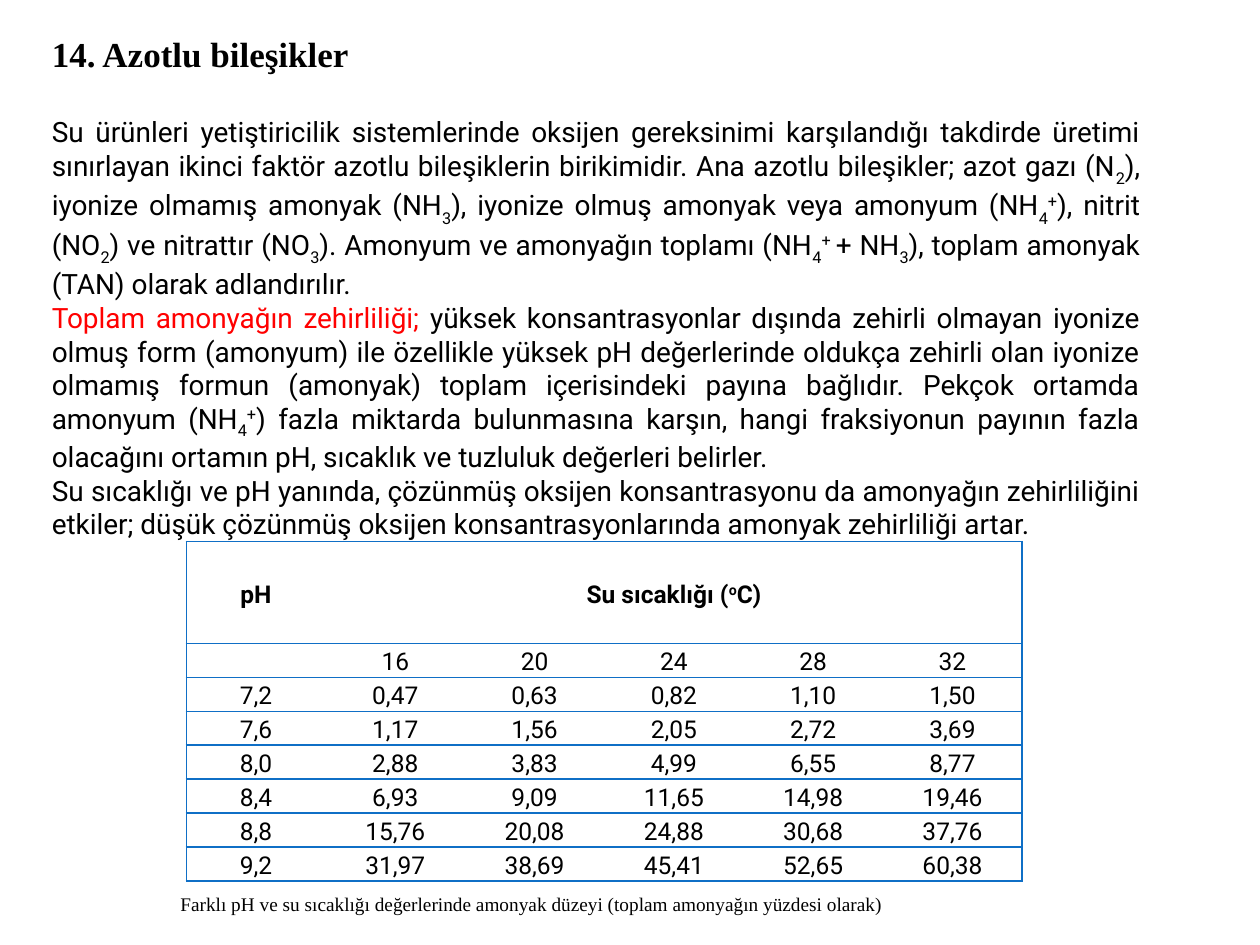
"""Build the slide on nitrogen compounds with its ammonia table."""
from lxml.etree import SubElement
from pptx import Presentation
from pptx.dml.color import RGBColor
from pptx.enum.text import MSO_ANCHOR, PP_ALIGN
from pptx.oxml.ns import qn
from pptx.util import Pt

BLACK = RGBColor(0x00, 0x00, 0x00)
RED = RGBColor(0xFF, 0x00, 0x00)
WHITE = RGBColor(0xFF, 0xFF, 0xFF)
BLUE = RGBColor(0x0F, 0x6F, 0xC6)

TITLE = {"name": "Times New Roman", "size": Pt(20), "bold": True}
BODY = {"name": "Roboto", "size": Pt(16), "bold": False}
CAPTION = {"name": "Times New Roman", "size": Pt(11), "bold": False}
FIGURE = {"name": "Roboto", "size": Pt(14), "bold": False}
HEADING = {**FIGURE, "bold": True}


def write(paragraph, marked, style, color=BLACK, lowered="-30000"):
    """Add runs; pieces between bars are subscript after _ and superscript after ^."""
    baselines = {"_": lowered, "^": "30000"}
    for piece in marked.split("|"):
        run = paragraph.add_run()
        run.text = piece.lstrip("_^")
        for key, value in style.items():
            setattr(run.font, key, value)
        run.font.color.rgb = color
        if piece[:1] in baselines:
            run._r.get_or_add_rPr().set("baseline", baselines[piece[0]])


def draw_border(cell, position, side, color):
    """Draw one cell edge, or hide it when the colour is None."""
    edge = SubElement(cell._tc.get_or_add_tcPr(), qn(f"a:ln{side}"), w=str(Pt(1)))
    cell._tc.tcPr.insert(position, edge)
    if color is None:
        SubElement(edge, qn("a:noFill"))
    else:
        fill = SubElement(edge, qn("a:solidFill"))
        SubElement(fill, qn("a:srgbClr"), val=str(color))


deck = Presentation()
deck.slide_width, deck.slide_height = Pt(720), Pt(540)
slide = deck.slides.add_slide(deck.slide_layouts[6])

article = slide.shapes.add_textbox(Pt(22.5), Pt(16.5), Pt(636), Pt(307)).text_frame
article.word_wrap = True
article.margin_top = Pt(2)
title = article.paragraphs[0]
title.space_after = Pt(23)
write(title, "14. Azotlu bileşikler", TITLE)

compounds, toxicity, oxygen = [article.add_paragraph() for _ in range(3)]
for paragraph in (compounds, toxicity, oxygen):
    paragraph.alignment = PP_ALIGN.JUSTIFY
write(
    compounds,
    "Su ürünleri yetiştiricilik sistemlerinde oksijen gereksinimi karşılandığı takdirde "
    "üretimi sınırlayan ikinci faktör azotlu bileşiklerin birikimidir. Ana azotlu "
    "bileşikler; azot gazı (N|_2|), iyonize olmamış amonyak (NH|_3|), iyonize olmuş "
    "amonyak veya amonyum (NH|_4|^+|), nitrit (NO|_2|) ve nitrattır (NO|_3|). Amonyum ve "
    "amonyağın toplamı (NH|_4|^+ |+ NH|_3|), toplam amonyak (TAN) olarak adlandırılır.",
    BODY,
)
write(toxicity, "Toplam amonyağın zehirliliği; ", BODY, RED)
write(
    toxicity,
    "yüksek konsantrasyonlar dışında zehirli olmayan iyonize olmuş form (amonyum) ile "
    "özellikle yüksek pH değerlerinde oldukça zehirli olan iyonize olmamış formun "
    "(amonyak) toplam içerisindeki payına bağlıdır. Pekçok ortamda amonyum (NH|_4|^+|) "
    "fazla miktarda bulunmasına karşın, hangi fraksiyonun payının fazla olacağını "
    "ortamın pH, sıcaklık ve tuzluluk değerleri belirler.",
    BODY,
    lowered="-25000",
)
write(
    oxygen,
    "Su sıcaklığı ve pH yanında, çözünmüş oksijen konsantrasyonu da amonyağın "
    "zehirliliğini etkiler; düşük çözünmüş oksijen konsantrasyonlarında amonyak "
    "zehirliliği artar.",
    BODY,
)

ammonia_levels = [
    ["pH", "Su sıcaklığı (|^o|C)", "", "", "", ""],
    ["", "16", "20", "24", "28", "32"],
    ["7,2", "0,47", "0,63", "0,82", "1,10", "1,50"],
    ["7,6", "1,17", "1,56", "2,05", "2,72", "3,69"],
    ["8,0", "2,88", "3,83", "4,99", "6,55", "8,77"],
    ["8,4", "6,93", "9,09", "11,65", "14,98", "19,46"],
    ["8,8", "15,76", "20,08", "24,88", "30,68", "37,76"],
    ["9,2", "31,97", "38,69", "45,41", "52,65", "60,38"],
]
last_column = len(ammonia_levels[0]) - 1
table = slide.shapes.add_table(
    len(ammonia_levels), last_column + 1, Pt(106.5), Pt(309.5), Pt(477.6), Pt(194)
).table
table.first_row = table.horz_banding = False
for column in table.columns:
    column.width = Pt(79.6)
for r, levels in enumerate(ammonia_levels):
    table.rows[r].height = Pt(19.4 if r else 58.2)
    for c, level in enumerate(levels):
        cell = table.cell(r, c)
        cell.margin_left = cell.margin_right = Pt(5)
        cell.margin_top = cell.margin_bottom = 0
        cell.vertical_anchor = MSO_ANCHOR.MIDDLE if r < 2 else MSO_ANCHOR.TOP
        cell.fill.solid()
        cell.fill.fore_color.rgb = WHITE
        edges = {
            "L": BLUE if c == 0 else None,
            "R": BLUE if c == last_column or (r == 0 and c > 0) else None,
            "T": BLUE,
            "B": BLUE,
        }
        for position, (side, color) in enumerate(edges.items()):
            draw_border(cell, position, side, color)
        entry = cell.text_frame.paragraphs[0]
        entry.alignment = PP_ALIGN.CENTER
        entry.line_spacing = 1.15
        if level:
            write(entry, level, FIGURE if r else HEADING)
        else:
            entry._p.get_or_add_endParaRPr().set("sz", "1400")
table.cell(0, 1).merge(table.cell(0, last_column))

caption = slide.shapes.add_textbox(Pt(96), Pt(506), Pt(528.5), Pt(21)).text_frame
caption.word_wrap = True
caption.vertical_anchor = MSO_ANCHOR.MIDDLE
write(
    caption.paragraphs[0],
    "Farklı pH ve su sıcaklığı değerlerinde amonyak düzeyi "
    "(toplam amonyağın yüzdesi olarak)",
    CAPTION,
)

deck.save("out.pptx")
